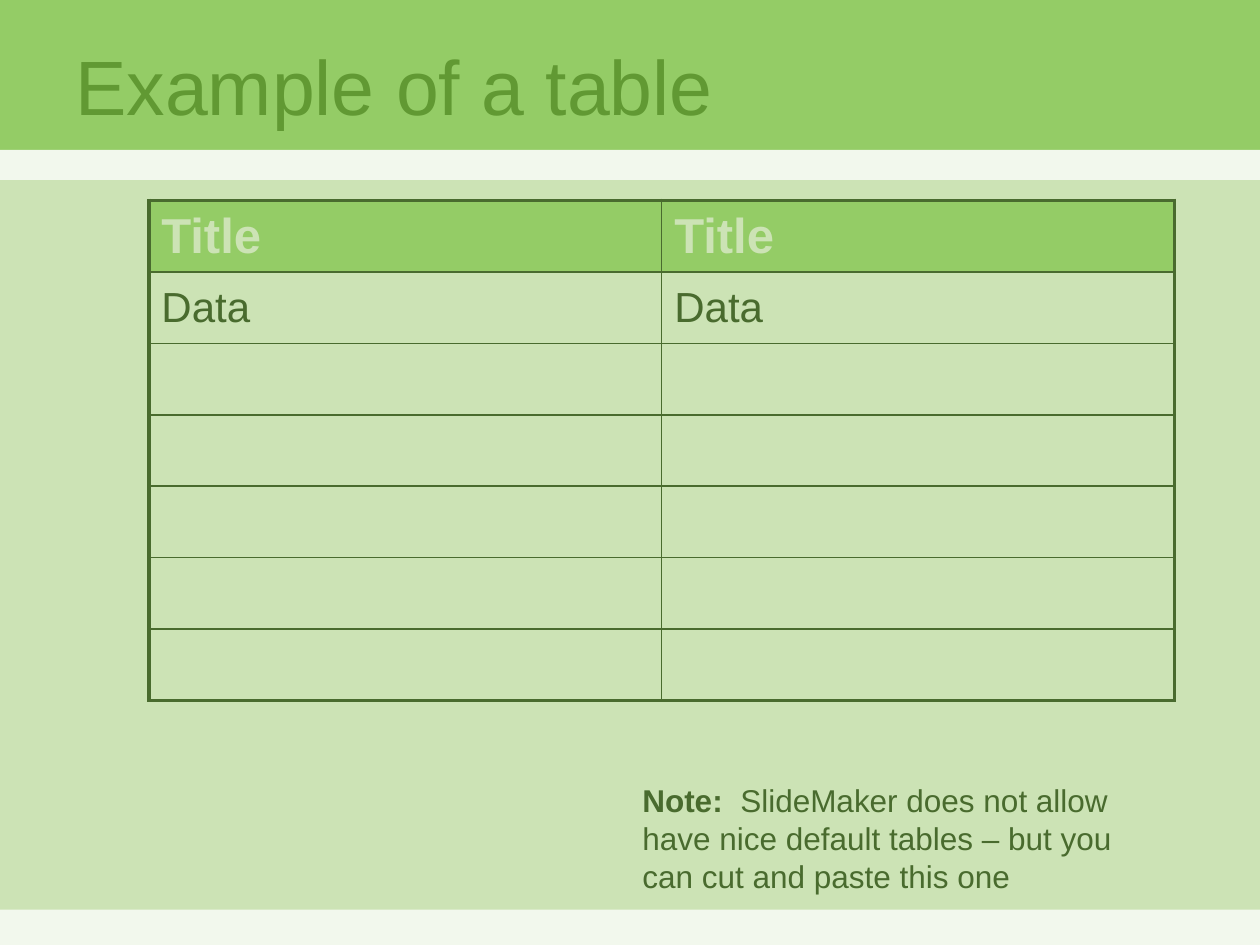
from dataclasses import dataclass

from lxml.etree import SubElement
from pptx import Presentation
from pptx.dml.color import RGBColor
from pptx.enum.shapes import MSO_SHAPE
from pptx.enum.text import MSO_ANCHOR
from pptx.oxml.ns import qn
from pptx.slide import Slide
from pptx.table import _Cell
from pptx.text.text import _Run
from pptx.util import Cm, Pt


@dataclass(frozen=True)
class Theme:
    font: str = "Arial"
    pale: str = "CCE3B5"
    bright: str = "94CC66"
    white: str = "F2F8ED"
    heading: str = "619933"
    dark: str = "496B2E"
    title_size: float = 44
    header_size: float = 28
    data_size: float = 24
    note_size: float = 18
    outer_border: float = 2.25
    inner_border: float = 1


@dataclass(frozen=True)
class Band:
    top: float
    height: float
    color: str


THEME = Theme()
SLIDE_WIDTH, SLIDE_HEIGHT = 25.4, 19.05
ROWS, COLUMNS = 7, 2
COLUMN_WIDTH, ROW_HEIGHT = 10.34, 1.44
BANDS = [
    Band(0, 3.33, THEME.bright),
    Band(3.02, 0.61, THEME.white),
    Band(18.34, 0.71, THEME.white),
]
CONTENT = [["Title", "Title"], ["Data", "Data"]]


def style_run(run: _Run, size: float, color: str, bold: bool = False) -> None:
    run.font.name = THEME.font
    run.font.size = Pt(size)
    run.font.bold = bold
    run.font.color.rgb = RGBColor.from_string(color)


def draw_band(slide: Slide, band: Band) -> None:
    stripe = slide.shapes.add_shape(
        MSO_SHAPE.RECTANGLE, 0, Cm(band.top), Cm(SLIDE_WIDTH), Cm(band.height)
    )
    stripe.shadow.inherit = False
    stripe.fill.solid()
    stripe.fill.fore_color.rgb = RGBColor.from_string(band.color)
    stripe.line.fill.background()


def draw_borders(cell: _Cell, row: int, column: int) -> None:
    outer_sides = {
        "a:lnL": column == 0,
        "a:lnR": column == COLUMNS - 1,
        "a:lnT": row == 0,
        "a:lnB": row == ROWS - 1,
    }
    properties = cell._tc.get_or_add_tcPr()
    for position, (side, outer) in enumerate(outer_sides.items()):
        width = THEME.outer_border if outer else THEME.inner_border
        border = SubElement(properties, qn(side), w=str(Pt(width)))
        fill = SubElement(border, qn("a:solidFill"))
        SubElement(fill, qn("a:srgbClr"), val=THEME.dark)
        properties.insert(position, border)


def draw_table(slide: Slide) -> None:
    table = slide.shapes.add_table(
        ROWS, COLUMNS, Cm(3), Cm(4.04),
        Cm(COLUMN_WIDTH * COLUMNS), Cm(ROW_HEIGHT * ROWS),
    ).table
    table.first_row = False
    table.horz_banding = False
    for column in table.columns:
        column.width = Cm(COLUMN_WIDTH)
    for row_index, row in enumerate(table.rows):
        row.height = Cm(ROW_HEIGHT)
        header = row_index == 0
        for column_index, cell in enumerate(row.cells):
            cell.vertical_anchor = MSO_ANCHOR.MIDDLE
            if header:
                cell.fill.solid()
                cell.fill.fore_color.rgb = RGBColor.from_string(THEME.bright)
            else:
                cell.fill.background()
            if row_index < len(CONTENT):
                cell.text_frame.text = CONTENT[row_index][column_index]
                style_run(
                    cell.text_frame.paragraphs[0].runs[0],
                    THEME.header_size if header else THEME.data_size,
                    THEME.pale if header else THEME.dark,
                    header,
                )
            draw_borders(cell, row_index, column_index)


def draw_title(slide: Slide) -> None:
    title = slide.shapes.add_textbox(Cm(1.27), Cm(0.71), Cm(23.04), Cm(2)).text_frame
    title.word_wrap = True
    title.vertical_anchor = MSO_ANCHOR.MIDDLE
    title.text = "Example of a table"
    style_run(title.paragraphs[0].runs[0], THEME.title_size, THEME.heading)


def draw_note(slide: Slide) -> None:
    note = slide.shapes.add_textbox(Cm(12.7), Cm(15.62), Cm(10.69), Cm(2.54)).text_frame
    note.word_wrap = True
    note.text = "Note:  "
    paragraph = note.paragraphs[0]
    style_run(paragraph.runs[0], THEME.note_size, THEME.dark, True)
    message = paragraph.add_run()
    message.text = (
        "SlideMaker does not allow have nice default tables – "
        "but you can cut and paste this one"
    )
    style_run(message, THEME.note_size, THEME.dark)


def main() -> None:
    presentation = Presentation()
    presentation.slide_width = Cm(SLIDE_WIDTH)
    presentation.slide_height = Cm(SLIDE_HEIGHT)
    slide = presentation.slides.add_slide(presentation.slide_layouts[6])
    slide.background.fill.solid()
    slide.background.fill.fore_color.rgb = RGBColor.from_string(THEME.pale)
    for band in BANDS:
        draw_band(slide, band)
    draw_title(slide)
    draw_table(slide)
    draw_note(slide)
    presentation.save("out.pptx")


if __name__ == "__main__":
    main()
